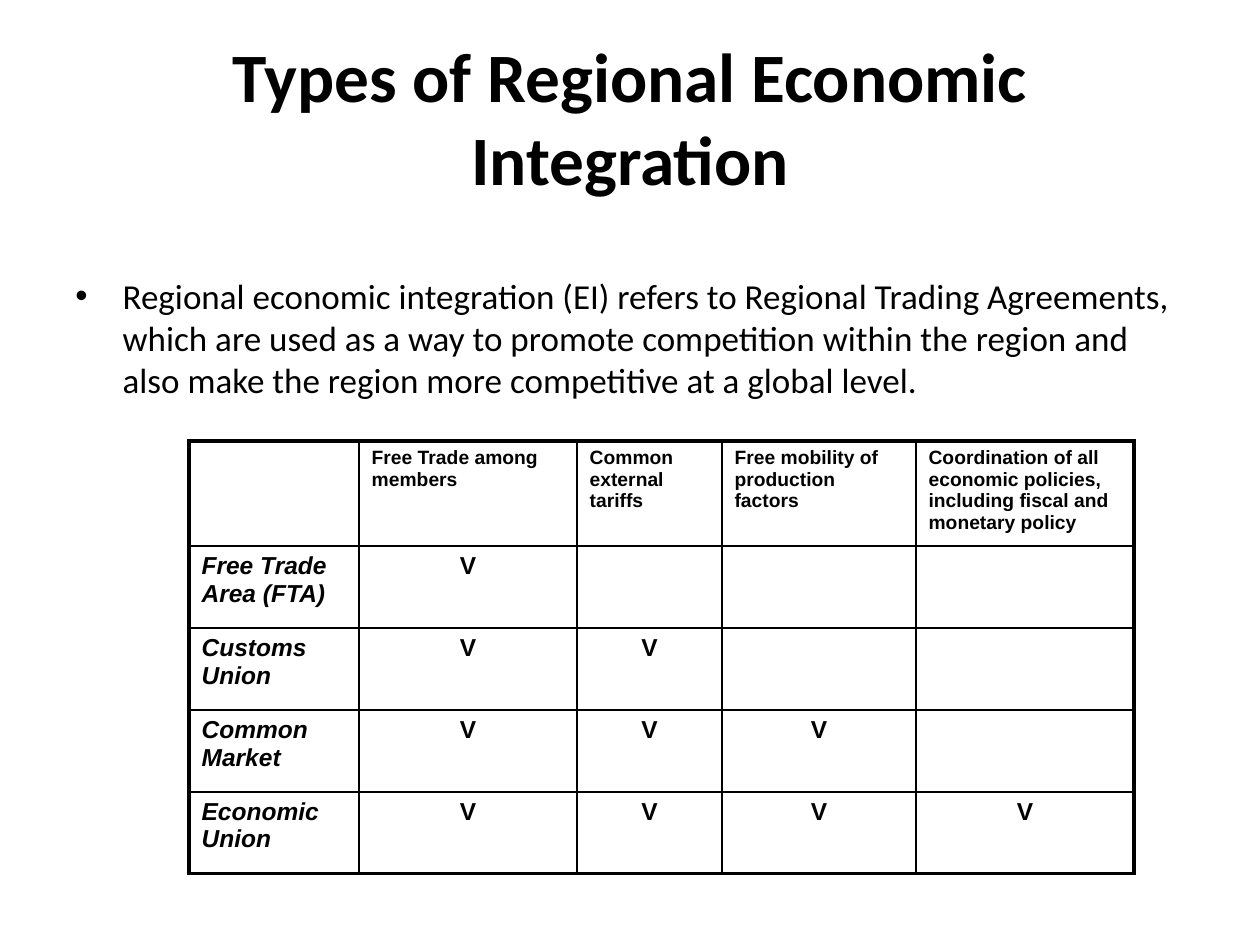
from lxml.etree import SubElement
from pptx import Presentation
from pptx.dml.color import RGBColor
from pptx.enum.text import MSO_ANCHOR, MSO_AUTO_SIZE, PP_ALIGN
from pptx.oxml.ns import qn
from pptx.util import Pt

COLORS = {"ink": "000000", "paper": "FFFFFF"}
HEADING = "Types of Regional Economic Integration"
DEFINITION = (
    "Regional economic integration (EI) refers to Regional Trading Agreements, "
    "which are used as a way to promote competition within the region and "
    "also make the region more competitive at a global level."
)
FEATURES = [
    "Free Trade among members",
    "Common external tariffs",
    "Free mobility of production factors",
    "Coordination of all economic policies, including fiscal and monetary policy",
]
# Each type has one more feature than the type before it
TYPES = ["Free Trade Area (FTA)", "Customs Union", "Common Market", "Economic Union"]
COLUMN_WIDTHS = [97.2, 124.56, 82.8, 110.88, 124.56]
ROW_HEIGHTS = [59.76] + [46.8] * len(TYPES)
THIN, THICK = 1, 2.25


def style_font(paragraph, name, size, bold=False, italic=False):
    font = paragraph.font
    font.name, font.size, font.bold, font.italic = name, Pt(size), bold, italic
    font.color.rgb = RGBColor.from_string(COLORS["ink"])


def add_border(cell, side, width):
    line = SubElement(cell._tc.get_or_add_tcPr(), qn(f"a:ln{side}"), w=str(Pt(width)))
    ink = SubElement(line, qn("a:solidFill"))
    SubElement(ink, qn("a:srgbClr"), val=COLORS["ink"])


def fill_half_clear(cell):
    cell.fill.solid()
    cell.fill.fore_color.rgb = RGBColor.from_string(COLORS["paper"])
    paper = cell._tc.tcPr.find(".//" + qn("a:solidFill") + "/" + qn("a:srgbClr") + f"[@val='{COLORS['paper']}']")
    SubElement(paper, qn("a:alpha"), val="50000")


deck = Presentation()
deck.slide_width, deck.slide_height = Pt(720), Pt(540)
slide = deck.slides.add_slide(deck.slide_layouts[5])

# Title
title = slide.shapes.title
title.left, title.top, title.width, title.height = Pt(36), Pt(21.6), Pt(648), Pt(90)
title.text_frame.text = HEADING
title.text_frame.word_wrap = True
title.text_frame.auto_size = MSO_AUTO_SIZE.NONE
title.text_frame.vertical_anchor = MSO_ANCHOR.MIDDLE
title.text_frame.paragraphs[0].alignment = PP_ALIGN.CENTER
style_font(title.text_frame.paragraphs[0], "Calibri", 39.6, bold=True)

# Bulleted definition
definition = slide.shapes.add_textbox(Pt(36), Pt(120), Pt(648), Pt(120)).text_frame
definition.word_wrap = True
definition.margin_top = Pt(37)
definition.text = DEFINITION
bullet = definition.paragraphs[0]
style_font(bullet, "Calibri", 20)
bullet_props = bullet._p.get_or_add_pPr()
bullet_props.set("marL", str(Pt(27)))
bullet_props.set("indent", str(Pt(-27)))
bullet_font = bullet_props.makeelement(qn("a:buFont"), typeface="Arial")
bullet_char = bullet_props.makeelement(qn("a:buChar"), char="•")
bullet_props.insert(0, bullet_font)
bullet_props.insert(1, bullet_char)

# Table of types and features
rows = [[""] + FEATURES] + [
    [kind] + ["V" if i <= level else "" for i in range(len(FEATURES))]
    for level, kind in enumerate(TYPES)
]
last_row, last_col = len(TYPES), len(FEATURES)
matrix = slide.shapes.add_table(
    len(rows), len(COLUMN_WIDTHS), Pt(108), Pt(252),
    Pt(sum(COLUMN_WIDTHS)), Pt(sum(ROW_HEIGHTS)),
).table
matrix.first_row = matrix.horz_banding = False
for column, width in zip(matrix.columns, COLUMN_WIDTHS):
    column.width = Pt(width)
for row, height in zip(matrix.rows, ROW_HEIGHTS):
    row.height = Pt(height)

for r, labels in enumerate(rows):
    for c, label in enumerate(labels):
        cell = matrix.cell(r, c)
        outer = {"L": c == 0, "R": c == last_col, "T": r == 0, "B": r == last_row}
        for side, on_edge in outer.items():
            add_border(cell, side, THICK if on_edge else THIN)
        fill_half_clear(cell)
        cell.text = label
        entry = cell.text_frame.paragraphs[0]
        style_font(entry, "Arial", 14 if r else 11, bold=True, italic=bool(r and c == 0))
        if r and c:
            entry.alignment = PP_ALIGN.CENTER

deck.save("out.pptx")
